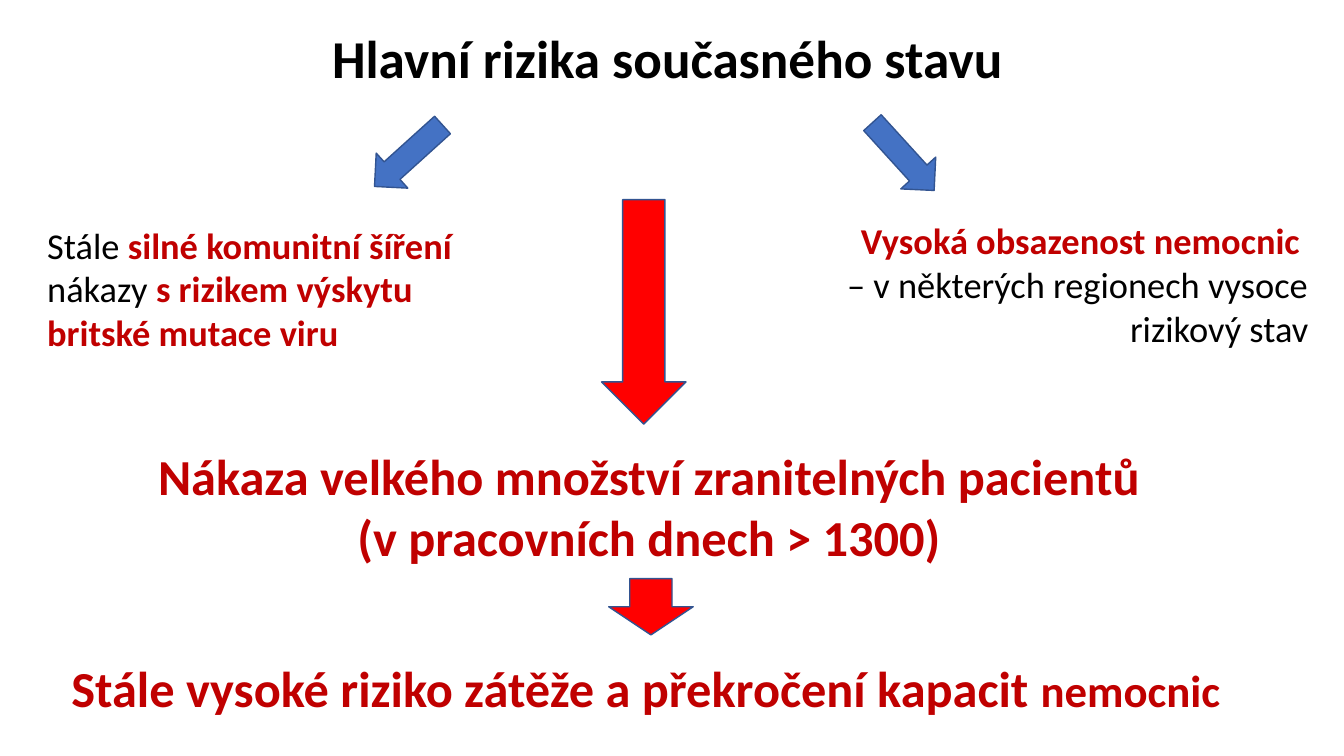
"""Build the slide on the main risks of the current state."""
from typing import Any, NamedTuple

from pptx import Presentation
from pptx.dml.color import RGBColor as Rgb
from pptx.enum.shapes import MSO_SHAPE as Shape
from pptx.enum.text import MSO_ANCHOR as Anchor, MSO_AUTO_SIZE as Fit, PP_ALIGN as Align
from pptx.util import Cm, Pt

HUES = {"black": "000000", "dark": "C00000", "red": "FF0000", "blue": "4472C4", "edge": "325491"}


class Box(NamedTuple):
    left: float
    top: float
    width: float
    height: float


class Run(NamedTuple):
    text: str
    size: float
    hue: str = "dark"
    bold: bool = True


class Note(NamedTuple):
    box: Box
    align: Align
    lines: list[list[Run]]


class Arrow(NamedTuple):
    box: Box
    hue: str
    turn: float = 0


TITLE = Note(Box(0.43, 0.51, 32.79, 1.88), Align.CENTER,
             [[Run("Hlavní rizika současného stavu", 38, "black")]])
NOTES = [
    Note(Box(0.94, 5.49, 11.46, 3.58), Align.LEFT, [[
        Run("Stále ", 26, "black", False), Run("silné komunitní šíření ", 26),
        Run("nákazy ", 26, "black", False), Run("s rizikem výskytu britské mutace viru", 26)]]),
    Note(Box(19.69, 5.38, 13.54, 3.58), Align.RIGHT, [
        [Run("Vysoká obsazenost nemocnic ", 26)],
        [Run("– v některých regionech vysoce rizikový stav", 26, "black", False)]]),
    Note(Box(3.15, 11.1, 26.42, 3.33), Align.CENTER, [[
        Run("Nákaza velkého množství zranitelných pacientů (v pracovních dnech > 1300)", 36)]]),
    Note(Box(1.04, 16.43, 30.73, 1.8), Align.CENTER, [[
        Run("Stále vysoké riziko zátěže a překročení kapacit ", 36), Run("nemocnic ", 32)]]),
]
ARROWS = [
    Arrow(Box(9.7, 2.77, 1.19, 2.31), "blue", 47.9),
    Arrow(Box(22.17, 2.79, 1.19, 2.31), "blue", 317.7),
    Arrow(Box(15.16, 5.03, 2.13, 5.66), "red"),
    Arrow(Box(15.34, 14.58, 2.13, 1.42), "red"),
]


def paint(hue: str) -> Rgb:
    """Return the named colour."""
    return Rgb.from_string(HUES[hue])


def apply(item: Any, form: dict[str, Any]) -> None:
    """Set each value of the format on the item."""
    for name, value in form.items():
        setattr(item, name, value)


def place(item: Any, box: Box) -> None:
    """Move and size the item to the box."""
    apply(item, {name: Cm(value) for name, value in box._asdict().items()})


def write(item: Any, note: Note) -> None:
    """Place the item and fill it with the text of the note."""
    place(item, note.box)
    frame = item.text_frame
    apply(frame, {"word_wrap": True, "auto_size": Fit.NONE, "vertical_anchor": Anchor.TOP})
    for i, line in enumerate(note.lines):
        para = frame.add_paragraph() if i else frame.paragraphs[0]
        apply(para, {"alignment": note.align, "line_spacing": 1.0, "space_before": Pt(0)})
        for part in line:
            run = para.add_run()
            run.text = part.text
            apply(run.font, {"name": "Calibri", "size": Pt(part.size), "bold": part.bold})
            run.font.color.rgb = paint(part.hue)


def point(slide: Any, arrow: Arrow) -> None:
    """Draw a block arrow."""
    item = slide.shapes.add_shape(Shape.DOWN_ARROW, *map(Cm, arrow.box))
    item.rotation = arrow.turn
    item.shadow.inherit = False
    item.fill.solid()
    item.fill.fore_color.rgb = paint(arrow.hue)
    item.line.color.rgb = paint("edge")
    item.line.width = Pt(1)


def main() -> None:
    """Build and save the slide."""
    deck = Presentation()
    apply(deck, {"slide_width": Cm(33.87), "slide_height": Cm(19.05)})
    slide = deck.slides.add_slide(deck.slide_layouts[5])
    write(slide.shapes.title, TITLE)
    for note in NOTES:
        write(slide.shapes.add_textbox(*map(Cm, note.box)), note)
    for arrow in ARROWS:
        point(slide, arrow)
    deck.save("out.pptx")


if __name__ == "__main__":
    main()
